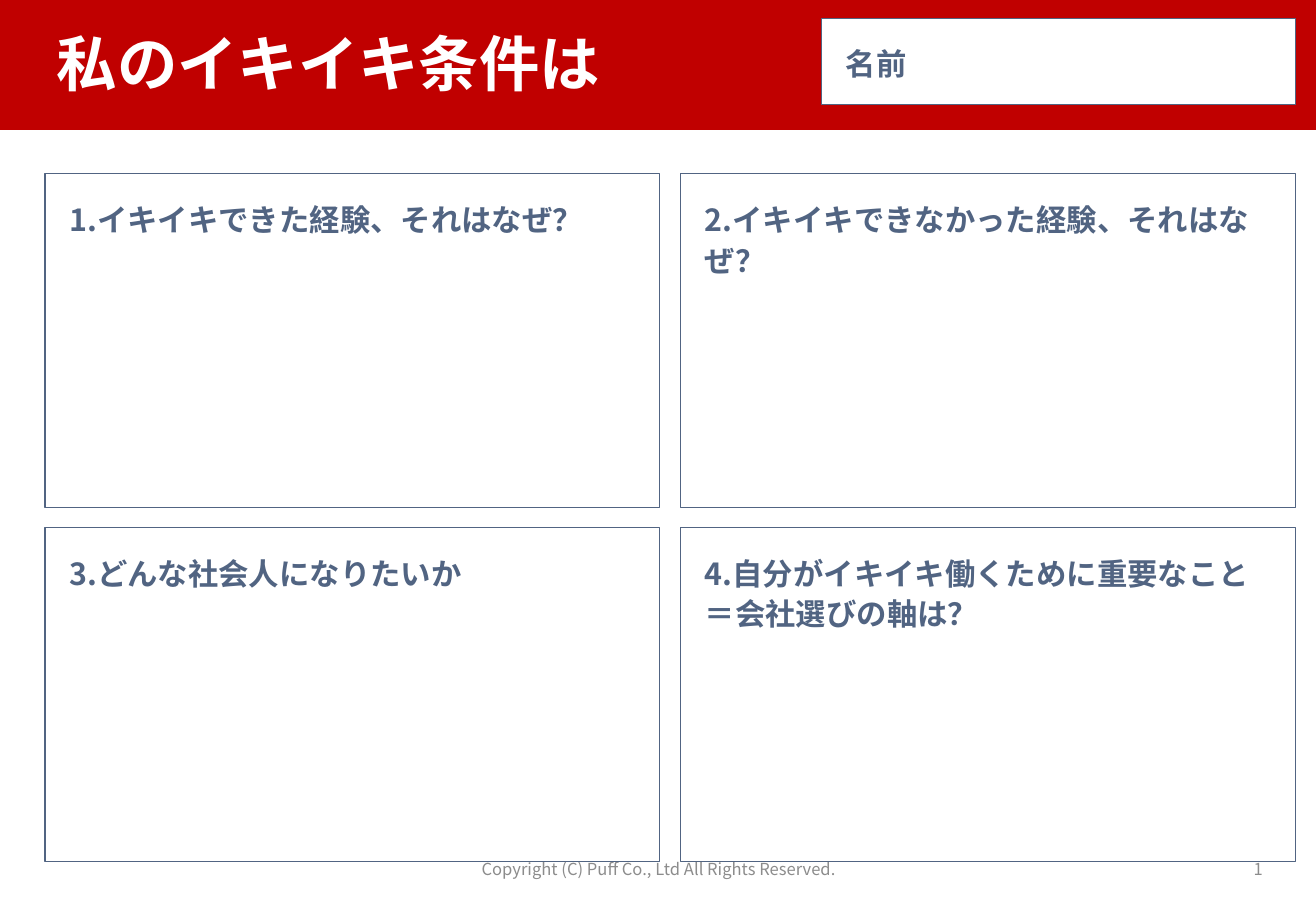
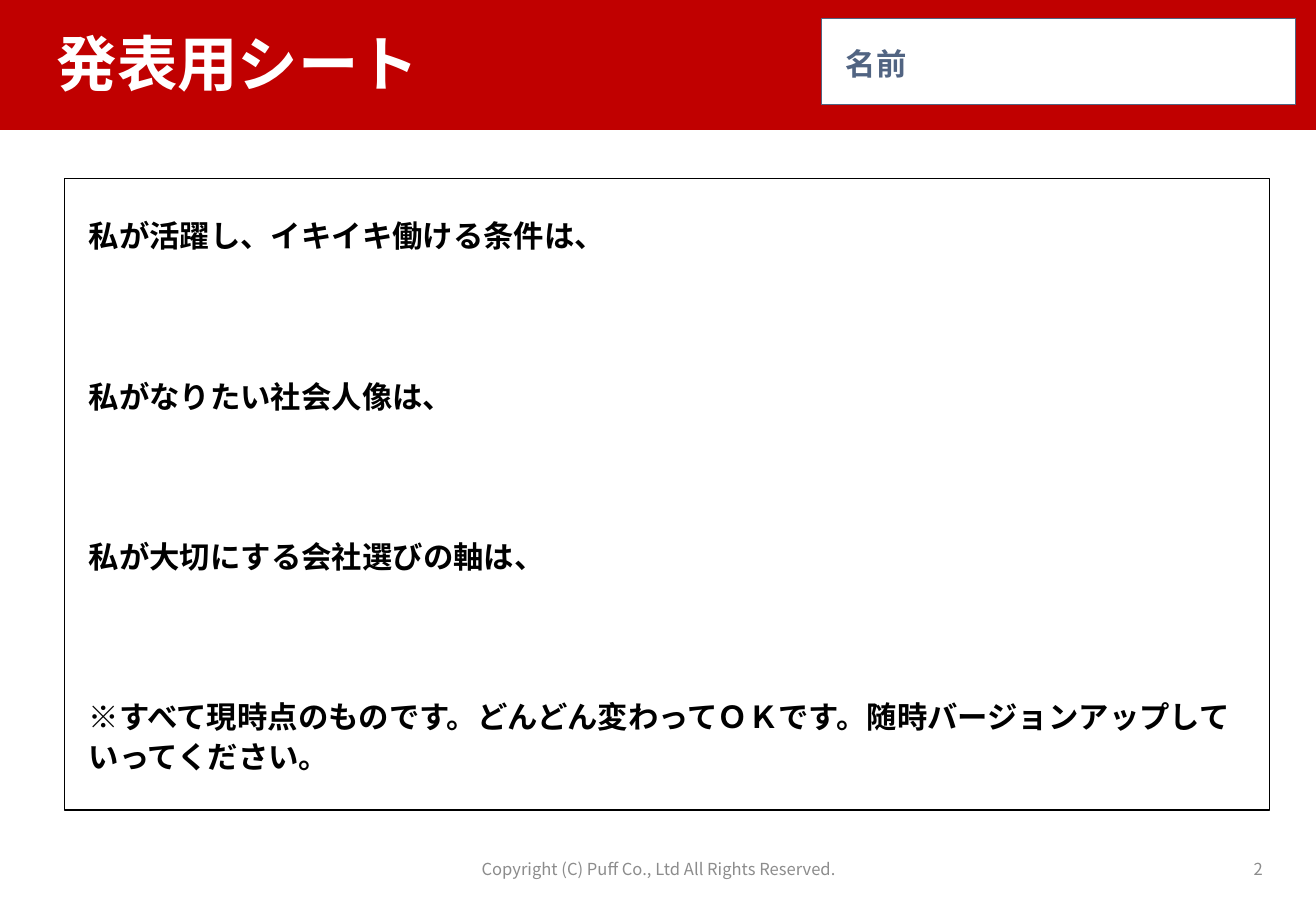
"""Build a two-slide worksheet about what makes work feel lively."""
from dataclasses import dataclass

from lxml import etree
from pptx import Presentation
from pptx.dml.color import RGBColor
from pptx.enum.shapes import MSO_SHAPE
from pptx.enum.text import MSO_ANCHOR, PP_ALIGN
from pptx.oxml.ns import qn
from pptx.util import Pt

RECT = MSO_SHAPE.RECTANGLE
TOP, MIDDLE = MSO_ANCHOR.TOP, MSO_ANCHOR.MIDDLE
LEFT, CENTER, RIGHT = PP_ALIGN.LEFT, PP_ALIGN.CENTER, PP_ALIGN.RIGHT

PX = 9144
SLIDE_W, SLIDE_H = 1083, 750

CONDITIONS_TITLE = "私のイキイキ条件は"
QUESTIONS = [
    "1.イキイキできた経験、それはなぜ？",
    "2.イキイキできなかった経験、それはなぜ？",
    "3.どんな社会人になりたいか",
    "4.自分がイキイキ働くために重要なこと＝会社選びの軸は？",
]
SHEET_TITLE = "発表用シート"
PROMPTS = [
    "私が活躍し、イキイキ働ける条件は、",
    "私がなりたい社会人像は、",
    "私が大切にする会社選びの軸は、",
    "※すべて現時点のものです。どんどん変わってＯＫです。随時バージョンアップしていってください。",
]
NAME_LABEL = "名前"
COPYRIGHT = "Copyright (C) Puff Co., Ltd All Rights Reserved."

BAND = (0, 0, SLIDE_W, 107)
TITLE = (37, 0, 1009, 110)
NAME = (676, 15, 390, 71)
FOOTER = (359, 695, 366, 40)
NUMBER = (805, 695, 244, 40)
SHEET = (53, 147, 992, 520)
GRID_X, GRID_Y, GRID_COLS = 37, 143, 2
CELL_W, CELL_H, GAP_X, GAP_Y = 506, 275, 17, 16
PADDING = 20


@dataclass(frozen=True)
class Theme:
    font: str = "Noto Sans CJK JP"
    red: str = "C00000"
    white: str = "FFFFFF"
    slate: str = "516482"
    black: str = "000000"
    grey: str = "8C8C8C"
    title: float = 35.8
    body: float = 18
    small: float = 9.8
    line: float = 0.75
    prompt_gap: float = 71.3


THEME = Theme()


def rgb(value):
    return RGBColor.from_string(value)


def emu(box):
    return [v * PX for v in box]


def write(shape, lines, size, color, bold=False, align=LEFT, anchor=MIDDLE,
          spacing=1.0, gap=0):
    tf = shape.text_frame
    tf.word_wrap = True
    tf.vertical_anchor = anchor
    for i, line in enumerate(lines):
        p = tf.add_paragraph() if i else tf.paragraphs[0]
        p.text = line
        p.alignment = align
        p.line_spacing = spacing
        if i and gap:
            p.space_before = Pt(gap)
        font = p.font
        font.size, font.bold, font.name = Pt(size), bold, THEME.font
        font.color.rgb = rgb(color)
        props = p._p.pPr.find(qn("a:defRPr"))
        etree.SubElement(props, qn("a:ea")).set("typeface", THEME.font)


def add_text(s, box, text, size, color, **style):
    write(s.shapes.add_textbox(*emu(box)), [text], size, color, **style)


def add_rect(s, box, fill, line=None):
    sp = s.shapes.add_shape(RECT, *emu(box))
    sp.shadow.inherit = False
    sp.fill.solid()
    sp.fill.fore_color.rgb = rgb(fill)
    if line:
        sp.line.color.rgb = rgb(line)
        sp.line.width = Pt(THEME.line)
    else:
        sp.line.fill.background()
    return sp


def add_panel(s, box, lines, color, anchor=MIDDLE, gap=0):
    sp = add_rect(s, box, THEME.white, color)
    tf = sp.text_frame
    tf.margin_left = tf.margin_right = PADDING * PX
    tf.margin_top = tf.margin_bottom = PADDING * PX
    write(sp, lines, THEME.body, color, bold=True, anchor=anchor,
          spacing=1.1, gap=gap)


def add_page(prs, title):
    s = prs.slides.add_slide(prs.slide_layouts[6])
    add_rect(s, BAND, THEME.red)
    add_text(s, TITLE, title, THEME.title, THEME.white, bold=True, spacing=0.9)
    add_text(s, FOOTER, COPYRIGHT, THEME.small, THEME.grey, align=CENTER)
    add_text(s, NUMBER, str(len(prs.slides)), THEME.small, THEME.grey, align=RIGHT)
    add_panel(s, NAME, [NAME_LABEL], THEME.slate)
    return s


def main():
    prs = Presentation()
    prs.slide_width, prs.slide_height = emu((SLIDE_W, SLIDE_H))

    s = add_page(prs, CONDITIONS_TITLE)
    for i, question in enumerate(QUESTIONS):
        row, col = divmod(i, GRID_COLS)
        cell = (GRID_X + col * (CELL_W + GAP_X), GRID_Y + row * (CELL_H + GAP_Y),
                CELL_W, CELL_H)
        add_panel(s, cell, [question], THEME.slate, anchor=TOP)

    s = add_page(prs, SHEET_TITLE)
    add_panel(s, SHEET, PROMPTS, THEME.black, gap=THEME.prompt_gap)

    prs.save("out.pptx")


if __name__ == "__main__":
    main()
